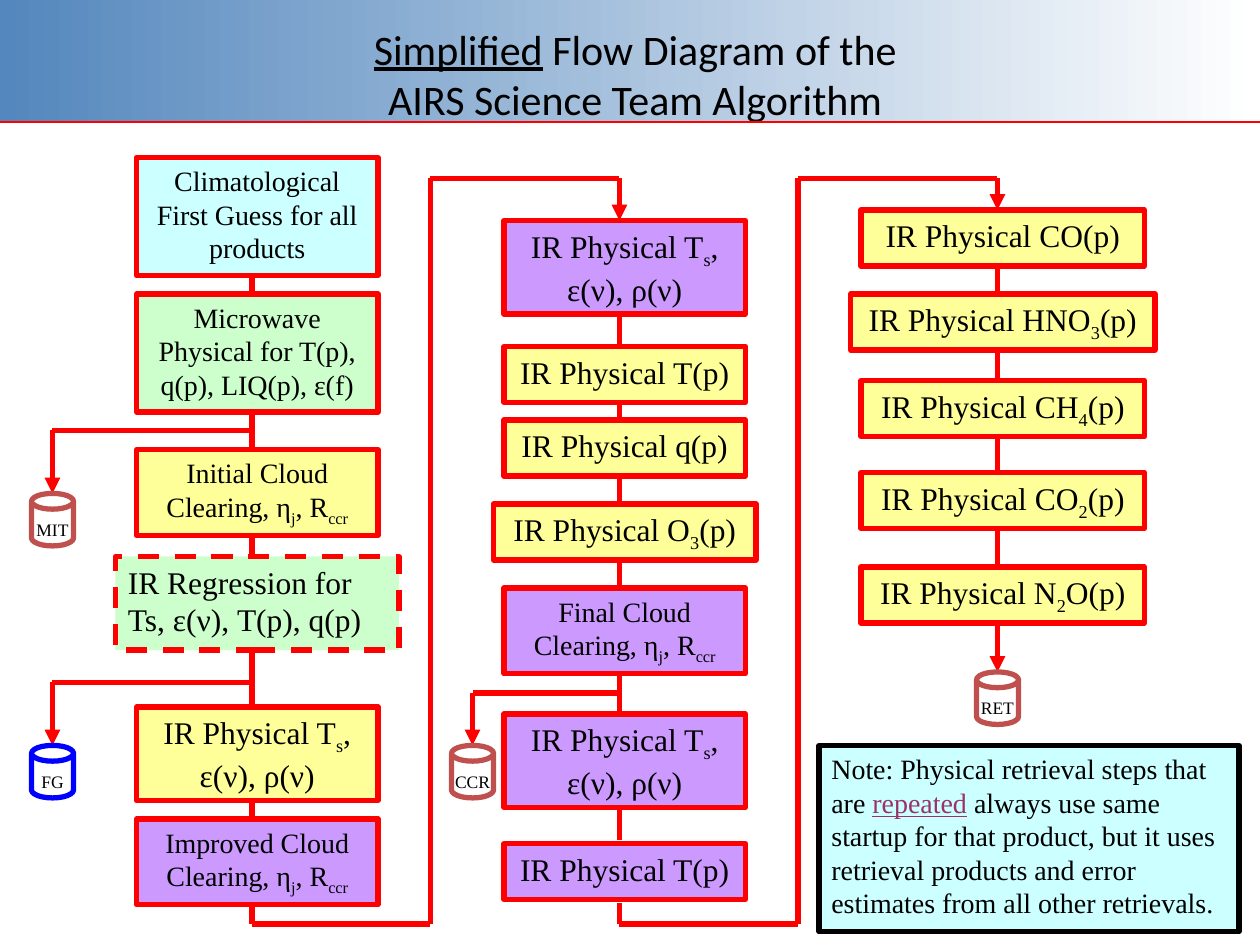
from lxml import etree
from pptx import Presentation
from pptx.dml.color import RGBColor
from pptx.enum.dml import MSO_LINE
from pptx.enum.shapes import MSO_CONNECTOR, MSO_SHAPE
from pptx.enum.text import MSO_ANCHOR, MSO_AUTO_SIZE, PP_ALIGN
from pptx.oxml.ns import qn
from pptx.util import Pt

STRAIGHT = MSO_CONNECTOR.STRAIGHT
RECTANGLE = MSO_SHAPE.RECTANGLE
CAN = MSO_SHAPE.CAN
DASH = MSO_LINE.DASH
TOP = MSO_ANCHOR.TOP
MIDDLE = MSO_ANCHOR.MIDDLE
FIT_SHAPE = MSO_AUTO_SIZE.SHAPE_TO_FIT_TEXT
CENTER = PP_ALIGN.CENTER
LEFT = PP_ALIGN.LEFT

RED, BRICK, BLUE, BLACK = "FF0000", "C0504D", "0000FF", "000000"
CYAN, GREEN, YELLOW, PURPLE = "CCFFFF", "CCFFCC", "FFFF99", "CC99FF"
SERIF = "Times New Roman"


def color(value):
    return RGBColor.from_string(value)


def write(shape, text, size, font=SERIF, alignment=CENTER, anchor=TOP):
    frame = shape.text_frame
    frame.word_wrap = True
    frame.vertical_anchor = anchor
    paragraph = frame.paragraphs[0]
    paragraph.alignment = alignment
    marked_runs = []
    for line_number, line in enumerate(text.split("\n")):
        if line_number:
            paragraph.add_line_break()
        for part_number, part in enumerate(line.split("|")):
            if not part:
                continue
            run = paragraph.add_run()
            run.text = part
            run.font.size = Pt(size)
            run.font.name = font
            run.font.color.rgb = color(BLACK)
            if part_number % 2:
                marked_runs.append(run)
    return marked_runs


presentation = Presentation()
presentation.slide_width = Pt(720)
presentation.slide_height = Pt(540)
slide = presentation.slides.add_slide(presentation.slide_layouts[6])
shapes = slide.shapes

banner = shapes.add_shape(RECTANGLE, Pt(0), Pt(-0.5), Pt(720), Pt(70))
banner.shadow.inherit = False
banner.line.fill.background()
banner.fill.gradient()
banner.fill.gradient_angle = 0
for stop, position, value in zip(banner.fill.gradient_stops, (0, 1), ("5487BD", "FFFFFF")):
    stop.position = position
    stop.color.rgb = color(value)

title = shapes.add_textbox(Pt(24), Pt(12), Pt(678), Pt(60))
for run in write(title, "|Simplified| Flow Diagram of the\nAIRS Science Team Algorithm", 24, "Calibri", anchor=MIDDLE):
    run.font.underline = True

flow_lines = [
    ([(0, 69.75), (720, 69.75)], 1.25, False),
    ([(570, 144), (570, 324)], 3, False),
    ([(354, 180), (354, 480)], 3, False),
    ([(144, 150), (144, 468)], 3, False),
    ([(144, 516), (144, 528), (246, 528), (246, 102), (354, 102), (354, 126)], 3, True),
    ([(354, 516), (354, 528), (456, 528), (456, 102), (570, 102), (570, 120)], 3, True),
    ([(144, 246), (30, 246), (30, 282)], 3, True),
    ([(144, 390), (30, 390), (30, 426)], 3, True),
    ([(354, 396), (270, 396), (270, 426)], 3, True),
    ([(570, 354), (570, 384)], 3, True),
]
for points, width, has_arrow in flow_lines:
    for start, end in zip(points, points[1:]):
        connector = shapes.add_connector(STRAIGHT, *map(Pt, start + end))
        connector.line.color.rgb = color(RED)
        connector.line.width = Pt(width)
        if has_arrow and end == points[-1]:
            etree.SubElement(connector.line._get_or_add_ln(), qn("a:tailEnd"), type="triangle")
        etree.SubElement(connector._element.spPr, qn("a:effectLst"))

surface = "IR Physical T|s|, ε(ν), ρ(ν)"
clearing = "Cloud Clearing, η|j|, R|ccr|"
first, second, third = 147, 357, 573
steps = [
    (first, 90, 138, 67.5, CYAN, 16, "Climatological First Guess for all products"),
    (first, 168, 138, 67.5, GREEN, 16, "Microwave Physical for T(p), q(p), LIQ(p), ε(f)"),
    (first, 257, 138, 49, YELLOW, 16, "Initial " + clearing),
    (first, 318, 162, 53.5, GREEN, 18, "IR Regression for Ts, ε(ν), T(p), q(p)"),
    (first, 404, 138, 53.5, YELLOW, 18, surface),
    (first, 468, 138, 49, PURPLE, 16, "Improved " + clearing),
    (second, 126, 138, 53.5, PURPLE, 18, surface),
    (second, 198, 138, 32, YELLOW, 18, "IR Physical T(p)"),
    (second, 240, 138, 32, YELLOW, 18, "IR Physical q(p)"),
    (second, 288, 150, 32, YELLOW, 18, "IR Physical O|3|(p)"),
    (second, 336, 138, 49, PURPLE, 16, "Final " + clearing),
    (second, 408, 138, 53.5, PURPLE, 18, surface),
    (second, 482, 138, 32, PURPLE, 18, "IR Physical T(p)"),
    (third, 120, 162, 32, YELLOW, 18, "IR Physical CO(p)"),
    (third, 168, 174, 32, YELLOW, 18, "IR Physical HNO|3|(p)"),
    (third, 217.5, 162, 32, YELLOW, 18, "IR Physical CH|4|(p)"),
    (third, 270, 162, 32, YELLOW, 18, "IR Physical CO|2|(p)"),
    (third, 324, 162, 32, YELLOW, 18, "IR Physical N|2|O(p)"),
]
for center, top, width, height, fill, size, text in steps:
    is_regression = text.startswith("IR Regression")
    box = shapes.add_shape(RECTANGLE, Pt(center - width / 2), Pt(top), Pt(width), Pt(height))
    box.shadow.inherit = False
    box.fill.solid()
    box.fill.fore_color.rgb = color(fill)
    box.line.color.rgb = color(RED)
    box.line.width = Pt(3)
    if is_regression:
        box.line.dash_style = DASH
    for run in write(box, text, size, alignment=LEFT if is_regression else CENTER):
        run.font._element.set("baseline", "-25000")
    box.text_frame.auto_size = FIT_SHAPE

stores = [
    ("MIT", 18, 282, BRICK, 12),
    ("FG", 18, 426, BLUE, 12),
    ("CCR", 258, 426, BRICK, 12),
    ("RET", 558, 384, BRICK, 12),
]
for name, left, top, outline, label_height in stores:
    can = shapes.add_shape(CAN, Pt(left), Pt(top), Pt(24), Pt(30))
    can.adjustments[0] = 0.375
    can.shadow.inherit = False
    can.fill.background()
    can.line.color.rgb = color(outline)
    can.line.width = Pt(3)
    label = shapes.add_textbox(Pt(left - 6), Pt(top + 11), Pt(36), Pt(19.5))
    write(label, name, 10)

note = shapes.add_shape(RECTANGLE, Pt(468), Pt(426), Pt(240), Pt(106.5))
note.shadow.inherit = False
note.fill.solid()
note.fill.fore_color.rgb = color(CYAN)
note.line.color.rgb = color(BLACK)
note.line.width = Pt(3)
note_text = (
    "Note: Physical retrieval steps that are |repeated| always use same startup for that product, "
    "but it uses retrieval products and error estimates from all other retrievals."
)
for run in write(note, note_text, 16, alignment=LEFT):
    run.font.underline = True
    run.font.color.rgb = color("993366")

presentation.save("out.pptx")
